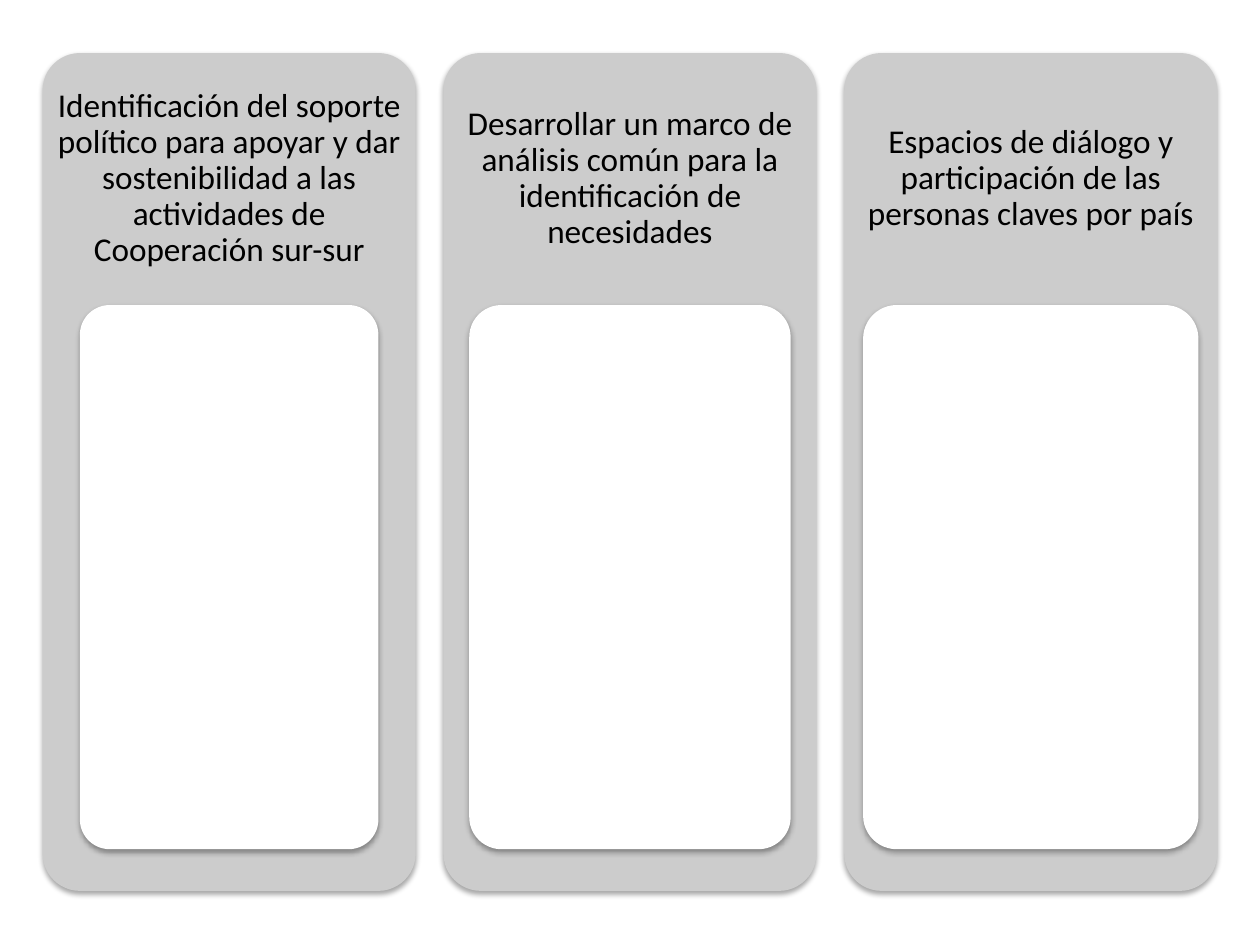
from lxml import etree
from pptx import Presentation, util as u
from pptx.dml.color import RGBColor
from pptx.enum import shapes, text
from pptx.oxml import parse_xml
from pptx.oxml.ns import nsdecls

SHADOW = f"""<a:effectLst {nsdecls('a')}>
  <a:outerShdw blurRad="40000" dist="23000" dir="5400000" rotWithShape="0">
    <a:srgbClr val="000000"><a:alpha val="35000"/></a:srgbClr>
  </a:outerShdw>
</a:effectLst>"""


def add_panel(s, left, top, width, height, color):
    """Rounded rectangle with a soft shadow below it; lengths in cm."""
    sp = s.shapes.add_shape(shapes.MSO_SHAPE.ROUNDED_RECTANGLE,
                            u.Cm(left), u.Cm(top), u.Cm(width), u.Cm(height))
    sp.adjustments[0] = 0.1
    sp.fill.solid()
    sp.fill.fore_color.rgb = RGBColor.from_string(color)
    sp.line.fill.background()
    sp.shadow.inherit = False
    sp_pr = sp.fill._xPr
    sp_pr.replace(sp_pr.find("{*}effectLst"), parse_xml(SHADOW))


def add_text(s, content, left, top, width, height, size=19, color="000000", font="Calibri"):
    """Centred text box; lengths in cm."""
    tf = s.shapes.add_textbox(u.Cm(left), u.Cm(top), u.Cm(width), u.Cm(height)).text_frame
    tf.word_wrap = True
    tf.vertical_anchor = text.MSO_ANCHOR.MIDDLE
    tf.margin_left = tf.margin_right = tf.margin_top = tf.margin_bottom = u.Cm(0.2)
    p = tf.paragraphs[0]
    p.alignment = text.PP_ALIGN.CENTER
    p.line_spacing = 0.9
    r = p.add_run()
    r.text = content
    r.font.size = u.Pt(size)
    r.font.name = font
    r.font.color.rgb = RGBColor.from_string(color)


prs = Presentation()
prs.slide_width, prs.slide_height = u.Cm(25.4), u.Cm(19.05)
s = prs.slides.add_slide(prs.slide_layouts[6])

# Column grid
left, top, step = 0.86, 1.07, 8.08
card_w, card_h, head_h = 7.52, 16.89, 5.08
panel_h = 10.97

# Heading and width of the white panel for each column
columns = [
    ("Identificación del soporte político para apoyar y dar sostenibilidad "
     "a las actividades de Cooperación sur-sur", 6.02),
    ("Desarrollar un marco de análisis común para la identificación de necesidades", 6.48),
    ("Espacios de diálogo y participación de las personas claves por país", 6.76),
]

# Grey card, heading and centred white panel
for i, (heading, panel_w) in enumerate(columns):
    x = left + i * step
    add_panel(s, x, top, card_w, card_h, "CCCCCC")
    add_text(s, heading, x, top, card_w, head_h)
    add_panel(s, x + (card_w - panel_w) / 2, top + head_h, panel_w, panel_h, "FFFFFF")

prs.save("out.pptx")
